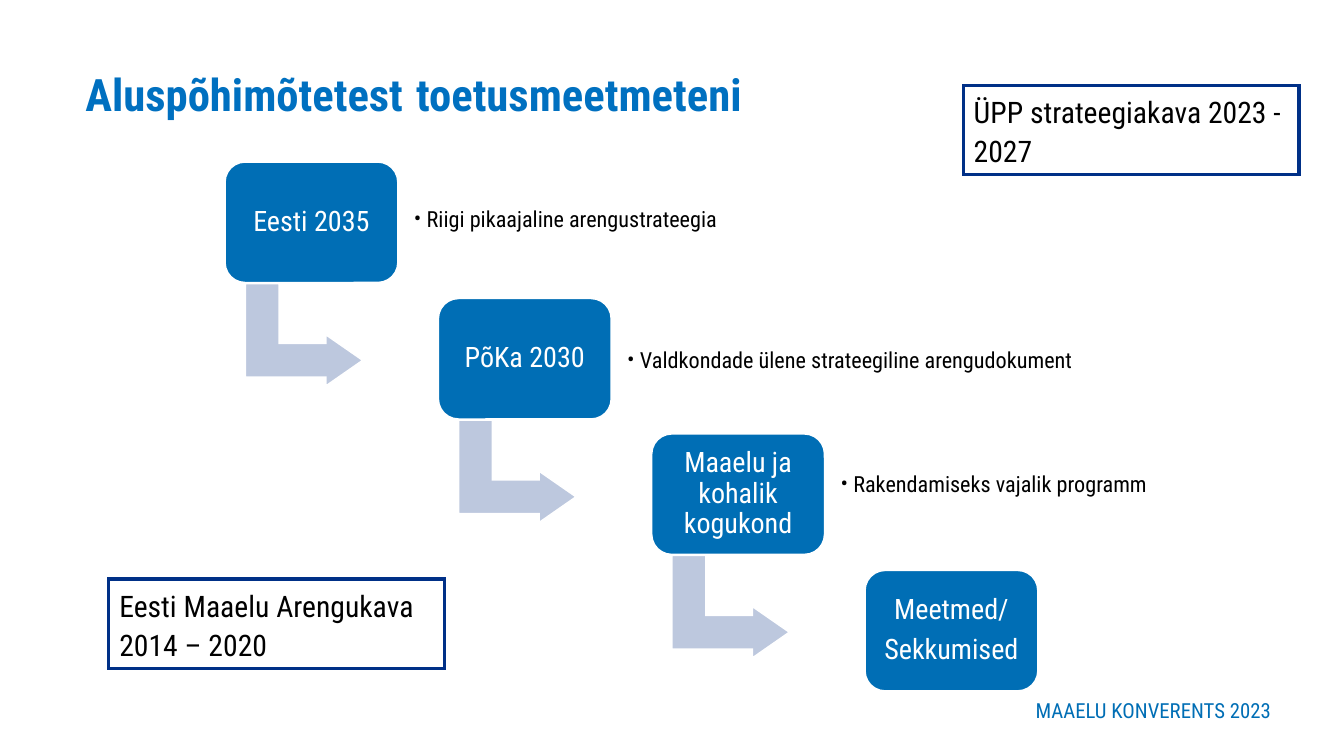
from lxml.etree import SubElement
from pptx import Presentation
from pptx.dml.color import RGBColor
from pptx.enum.shapes import MSO_SHAPE
from pptx.enum.text import MSO_ANCHOR, MSO_AUTO_SIZE, PP_ALIGN
from pptx.oxml.ns import qn
from pptx.util import Emu, Pt

PX = 9144
FONT = "Roboto Condensed"
COLORS = {
    "title": "0070C0",
    "step": "006EB5",
    "arrow": "BDC8DE",
    "frame": "003087",
    "white": "FFFFFF",
    "black": "000000",
}
STEPS = [
    ["Eesti 2035"],
    ["PõKa 2030"],
    ["Maaelu ja kohalik kogukond"],
    ["Meetmed/", "Sekkumised"],
]
NOTES = [
    ("Riigi pikaajaline arengustrateegia", 9, 391),
    ("Valdkondade ülene strateegiline arengudokument", 13, 436),
    ("Rakendamiseks vajalik programm", 2, 402),
]


def px(*lengths):
    return [Emu(length * PX) for length in lengths]


def color(name):
    return RGBColor.from_string(COLORS[name])


def style(para, size, tone, spacing, align=PP_ALIGN.LEFT):
    para.font.name = FONT
    para.font.size = Pt(size)
    para.font.color.rgb = color(tone)
    para.line_spacing = spacing
    para.alignment = align


def set_frame(frame, anchor, side, top):
    frame.word_wrap = True
    frame.auto_size = MSO_AUTO_SIZE.NONE
    frame.vertical_anchor = anchor
    frame.margin_left = frame.margin_right = Emu(side * PX)
    frame.margin_top = frame.margin_bottom = Emu(top * PX)


def add_block(page, kind, area, fill, line, width):
    block = page.shapes.add_shape(kind, *px(*area))
    block.shadow.inherit = False
    block.fill.solid()
    block.fill.fore_color.rgb = color(fill)
    block.line.color.rgb = color(line)
    block.line.width = Pt(width)
    SubElement(block.line._get_or_add_ln(), qn("a:miter")).set("lim", "800000")
    return block


def add_title(page):
    title = page.shapes.title
    title.left, title.top, title.width, title.height = px(70, 56, 1109, 112)
    set_frame(title.text_frame, MSO_ANCHOR.TOP, 10, 6)
    para = title.text_frame.paragraphs[0]
    style(para, 30, "title", 0.88)
    para.font.bold = True
    for text, size in (("Aluspõhimõtetest", 30.2), (" ", 36), ("toetusmeetmeteni", 30.2)):
        span = para.add_run()
        span.text = text
        span.font.size = Pt(size)


def add_step(page, left, top, lines):
    step = add_block(page, MSO_SHAPE.ROUNDED_RECTANGLE, (left, top, 162, 113), "step", "white", 1)
    set_frame(step.text_frame, MSO_ANCHOR.MIDDLE, 8, 8)
    step.text_frame.text = "\n".join(lines)
    for para in step.text_frame.paragraphs:
        style(para, 19, "white", 0.9, PP_ALIGN.CENTER)
        para.space_after = Pt(6.65)


def add_arrow(page, left, top):
    arrow = add_block(page, MSO_SHAPE.BENT_UP_ARROW, (left, top, 96, 110), "arrow", "white", 1)
    arrow.rotation = 90
    for index, value in enumerate((0.33, 0.25, 0.36)):
        arrow.adjustments[index] = value


def add_text(page, area, text, size, tone, spacing):
    box = page.shapes.add_textbox(*px(*area))
    set_frame(box.text_frame, MSO_ANCHOR.TOP, 10, 5)
    box.text_frame.text = text
    style(box.text_frame.paragraphs[0], size, tone, spacing)
    return box


def add_note(page, area, text):
    note = add_text(page, area, text, 15, "black", 0.9)
    set_frame(note.text_frame, MSO_ANCHOR.MIDDLE, 8, 8)
    properties = note.text_frame.paragraphs[0]._p.get_or_add_pPr()
    properties.set("marL", str(12 * PX))
    properties.set("indent", str(-12 * PX))
    defaults = properties.find(qn("a:defRPr"))
    for tag, name, value in (("a:buFont", "typeface", FONT), ("a:buChar", "char", "•")):
        bullet = SubElement(properties, qn(tag))
        bullet.set(name, value)
        defaults.addprevious(bullet)


def add_plan(page, left, top, text):
    plan = add_block(page, MSO_SHAPE.RECTANGLE, (left, top, 315, 84), "white", "frame", 2.25)
    set_frame(plan.text_frame, MSO_ANCHOR.TOP, 10, 5)
    plan.text_frame.text = text
    style(plan.text_frame.paragraphs[0], 20, "black", 1.1)


def main():
    deck = Presentation()
    deck.slide_width, deck.slide_height = px(1260, 709)
    page = deck.slides.add_slide(deck.slide_layouts[5])
    add_title(page)
    for index, lines in enumerate(STEPS):
        left, top = 211 + 200 * index, 152 + round(127.6 * index)
        if index < len(NOTES):
            text, drop, width = NOTES[index]
            add_arrow(page, left + 26, top + 107)
            add_note(page, (left + 169, top + drop, width, 92), text)
        add_step(page, left, top, lines)
    add_plan(page, 102, 543, "Eesti Maaelu Arengukava 2014 – 2020")
    add_plan(page, 903, 80, "ÜPP strateegiakava 2023 - 2027")
    add_text(page, (961, 647, 290, 34), "MAAELU KONVERENTS 2023", 14, "step", 1.1)
    deck.save("out.pptx")


if __name__ == "__main__":
    main()
